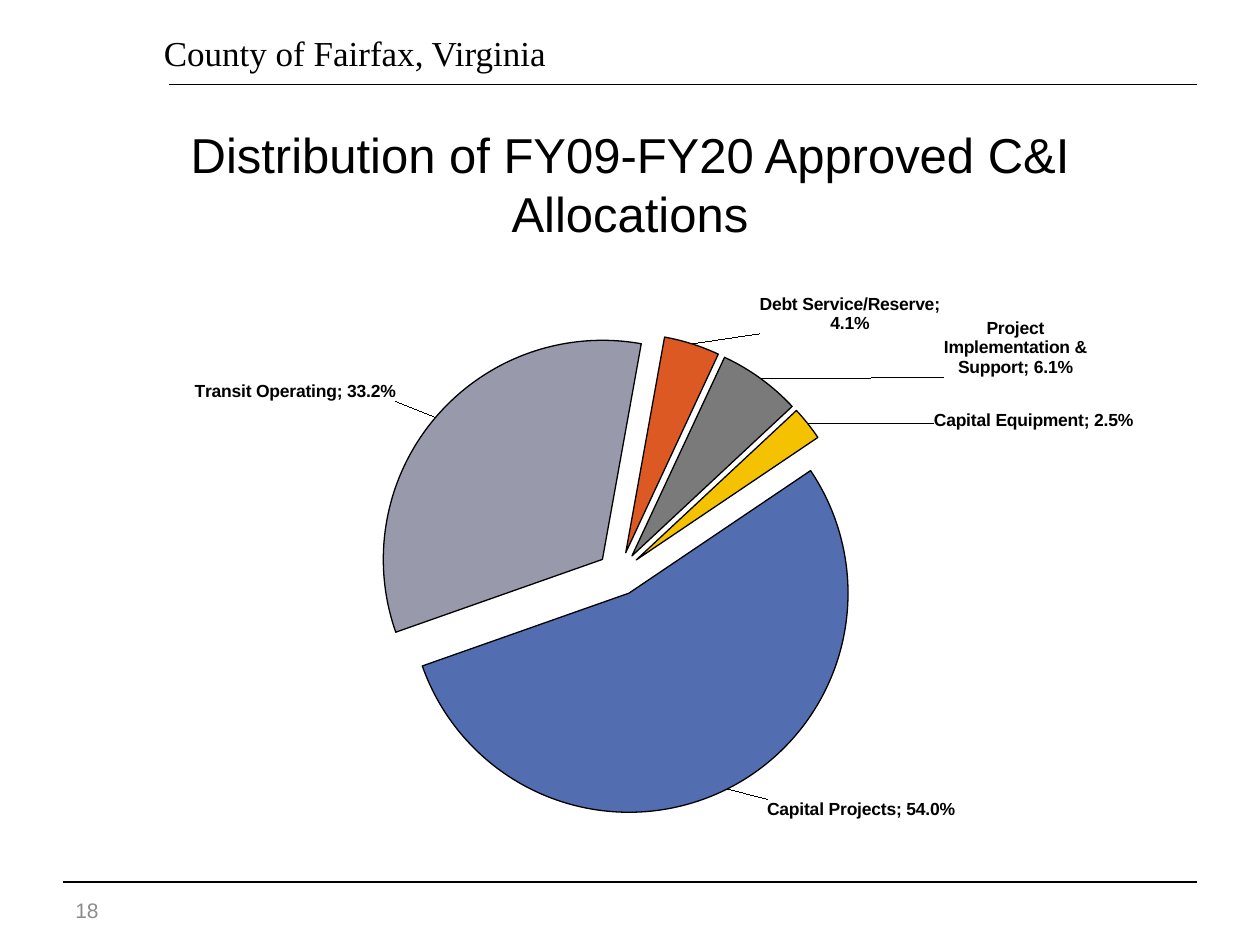
from copy import deepcopy
from pptx import Presentation
from pptx.chart.data import CategoryChartData
from pptx.dml.color import RGBColor
from pptx.enum.chart import XL_CHART_TYPE as CT, XL_LABEL_POSITION as LP
from pptx.enum.shapes import MSO_CONNECTOR as MC
from pptx.enum.text import MSO_ANCHOR as VA, PP_ALIGN as PA
from pptx.oxml import parse_xml
from pptx.oxml.ns import nsdecls, qn
from pptx.util import Inches, Pt

THEME = {
    "black": "000000", "grey": "8C8C8C",
    "sans": "Arial", "serif": "Times New Roman",
    "header": 20, "title": 28, "label": 10, "number": 12, "line": 0.75,
}
# text, box, font, size, colour, alignment, anchor, inset
TEXTS = [
    ("County of Fairfax, Virginia", (1.3, 0.25, 3.7, 0.46), "serif", "header", "black", PA.LEFT, VA.TOP, 0),
    ("Distribution of FY09-FY20 Approved C&I Allocations", (0.5, 0.83, 9, 1.25), "sans", "title", "black",
     PA.CENTER, VA.MIDDLE, 0.1),
    ("18", (0.5, 7.02, 2.33, 0.4), "sans", "number", "grey", PA.LEFT, VA.MIDDLE, 0.1),
]
RULES = [(1.34, 0.67, 9.5), (0.5, 7, 9.5)]
# category, share, colour, label offset
SLICES = [
    ("Project\nImplementation & Support", 0.061, "7A7A7A", (0.172, 0.008)),
    ("Capital Equipment", 0.025, "F5C201", (0.116, 0.018)),
    ("Capital Projects", 0.54, "526DB0", (0.035, 0.006)),
    ("Transit Operating", 0.332, "989AAC", (-0.033, -0.018)),
    ("Debt Service/Reserve", 0.041, "DC5924", (0.063, -0.005)),
]
CHART_BOX = (0.88, 2.17, 8.25, 4.95)
PLOT = {"x": 0.257, "y": 0.095, "w": 0.464, "h": 0.773}
START_ANGLE, EXPLOSION = 25, 10


def color(name):
    return RGBColor.from_string(THEME.get(name, name))


def c_xml(tag, body="", **attrs):
    extra = "".join(f' {k}="{v}"' for k, v in attrs.items())
    return parse_xml(f"<c:{tag} {nsdecls('c')}{extra}>{body}</c:{tag}>")


def layout(values, target=""):
    modes = "".join(f'<c:{k}Mode val="edge"/>' for k in "xy") if target else ""
    sizes = "".join(f'<c:{k} val="{v}"/>' for k, v in values.items())
    return c_xml("layout", f"<c:manualLayout>{target}{modes}{sizes}</c:manualLayout>")


def style_font(font, face, size, fill):
    font.name = THEME[face]
    font.size = Pt(THEME[size])
    font.color.rgb = color(fill)


def style_line(line):
    line.color.rgb = color("black")
    line.width = Pt(THEME["line"])


def add_text(slide, text, box, face, size, fill, align, anchor, inset):
    tf = slide.shapes.add_textbox(*map(Inches, box)).text_frame
    tf.word_wrap = True
    tf.vertical_anchor = anchor
    tf.margin_left = tf.margin_right = Inches(inset)
    tf.margin_top = tf.margin_bottom = Inches(inset / 2)
    tf.text = text
    p = tf.paragraphs[0]
    p.alignment = align
    style_font(p.runs[0].font, face, size, fill)


def add_rule(slide, left, y, right):
    s = slide.shapes.add_connector(MC.STRAIGHT, *map(Inches, (left, y, right, y)))
    style_line(s.line)
    s._element.spPr.append(parse_xml(f"<a:effectLst {nsdecls('a')}/>"))


def add_labels(series):
    labels = series.data_labels
    labels.show_value = labels.show_category_name = True
    labels.number_format = "0.0%"
    labels.number_format_is_linked = False
    labels.position = LP.OUTSIDE_END
    style_font(labels.font, "sans", "label", "black")
    labels.font.bold = True
    group = labels._element
    for leader in group.findall(qn("c:showLeaderLines")):
        group.remove(leader)
    group.append(c_xml("separator", "; "))
    shared = list(group)
    group.append(c_xml("showLeaderLines", val=1))
    for i, (_, _, _, (dx, dy)) in enumerate(SLICES):
        label = c_xml("dLbl", f'<c:idx val="{i}"/>')
        label.append(layout({"x": dx, "y": dy}))
        label.extend(deepcopy(shared))
        group.insert(i, label)


def add_pie(slide):
    data = CategoryChartData(number_format="0.0%")
    data.categories = [s[0] for s in SLICES]
    data.add_series("Series 1", [s[1] for s in SLICES])
    chart = slide.shapes.add_chart(CT.PIE, *map(Inches, CHART_BOX), data).chart
    chart.has_legend = chart.has_title = False
    style_font(chart.font, "sans", "label", "black")
    plot = chart.plots[0]
    plot.vary_by_categories = True
    series = plot.series[0]
    style_line(series.format.line)
    series._element.spPr.addnext(c_xml("explosion", val=EXPLOSION))
    for i, (_, _, fill, _) in enumerate(SLICES):
        fmt = series.points[i].format
        fmt.fill.solid()
        fmt.fill.fore_color.rgb = color(fill)
        style_line(fmt.line)
    add_labels(series)

    pie = plot._element
    for old in pie.findall(qn("c:firstSliceAng")):
        pie.remove(old)
    pie.append(c_xml("firstSliceAng", val=START_ANGLE))
    area = pie.getparent()
    for old in area.findall(qn("c:layout")):
        area.remove(old)
    area.insert(0, layout(PLOT, '<c:layoutTarget val="inner"/>'))


def main():
    prs = Presentation()
    prs.slide_width, prs.slide_height = Inches(10), Inches(7.5)
    slide = prs.slides.add_slide(prs.slide_layouts[6])
    for rule in RULES:
        add_rule(slide, *rule)
    for text in TEXTS:
        add_text(slide, *text)
    add_pie(slide)
    prs.save("out.pptx")


if __name__ == "__main__":
    main()
